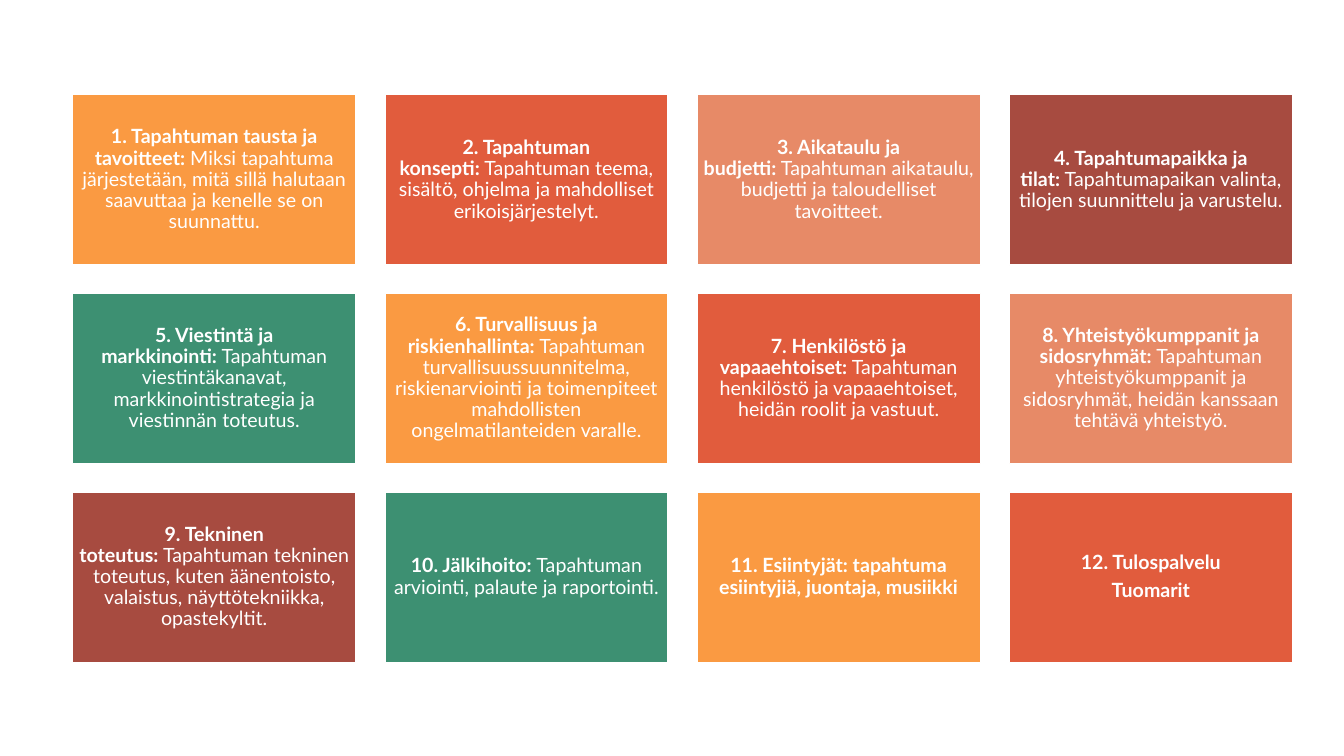
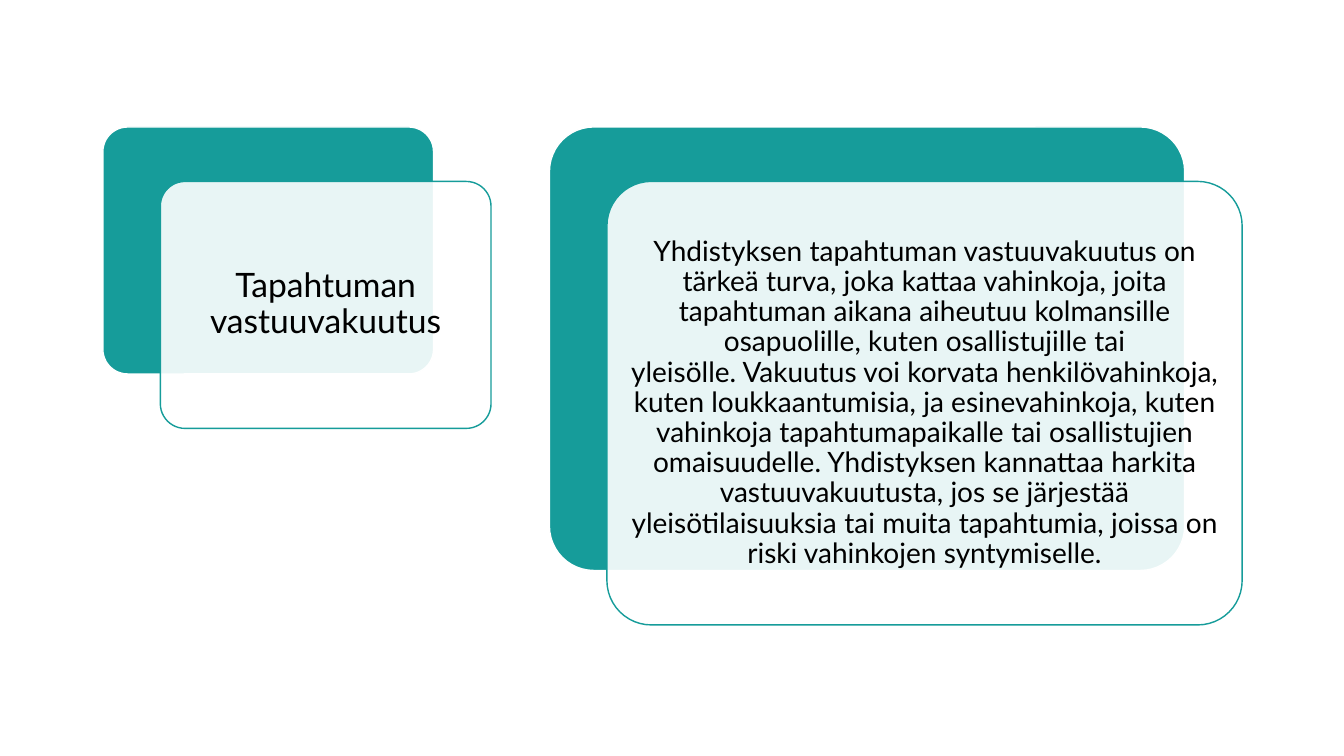
from dataclasses import dataclass
from lxml.etree import SubElement
from pptx import Presentation
from pptx.dml.color import RGBColor
from pptx.enum.shapes import MSO_SHAPE
from pptx.enum.text import MSO_ANCHOR, PP_ALIGN
from pptx.oxml.ns import qn
from pptx.util import Inches, Pt


@dataclass(frozen=True)
class Theme:
    font: str = "Lato"
    white: str = "FFFFFF"
    black: str = "000000"
    teal: str = "169C9A"
    topics: tuple = ("FA9A42", "E15C3D", "E78A67", "A74B40", "3D9072")
    topic_size: int = 14
    heading_size: int = 24
    body_size: int = 20
    line_width: int = 1
    line_spacing: float = 0.9
    space_after: int = 5
    card_corner: float = 0.1
    card_opacity: int = 90


theme = Theme()
NBSP = chr(160)


def add_panel(slide, kind, left, top, width, height, fill, line):
    panel = slide.shapes.add_shape(
        kind, Inches(left), Inches(top), Inches(width), Inches(height))
    panel.shadow.inherit = False
    panel.fill.solid()
    panel.fill.fore_color.rgb = RGBColor.from_string(fill)
    panel.line.color.rgb = RGBColor.from_string(line)
    panel.line.width = Pt(theme.line_width)
    return panel


def write_text(panel, paragraphs, size, color, inset):
    frame = panel.text_frame
    frame.word_wrap = True
    frame.vertical_anchor = MSO_ANCHOR.MIDDLE
    frame.margin_left = frame.margin_right = Inches(inset)
    frame.margin_top = frame.margin_bottom = Inches(inset)
    for index, runs in enumerate(paragraphs):
        paragraph = frame.add_paragraph() if index else frame.paragraphs[0]
        paragraph.alignment = PP_ALIGN.CENTER
        paragraph.line_spacing = theme.line_spacing
        paragraph.space_after = Pt(theme.space_after)
        for text, bold in runs:
            run = paragraph.add_run()
            run.text = text
            run.font.name = theme.font
            run.font.size = Pt(size)
            run.font.bold = bold
            run.font.color.rgb = RGBColor.from_string(color)


presentation = Presentation()
presentation.slide_width = Inches(13.33)
presentation.slide_height = Inches(7.5)
blank = presentation.slide_layouts[6]

explained_topics = [
    ("1. Tapahtuman tausta ja tavoitteet:",
     "Miksi tapahtuma järjestetään, mitä sillä halutaan saavuttaa ja kenelle se on suunnattu."),
    ("2. Tapahtuman konsepti:",
     "Tapahtuman teema, sisältö, ohjelma ja mahdolliset erikoisjärjestelyt."),
    ("3. Aikataulu ja budjetti:",
     "Tapahtuman aikataulu, budjetti ja taloudelliset tavoitteet."),
    ("4. Tapahtumapaikka ja tilat:",
     "Tapahtumapaikan valinta, tilojen suunnittelu ja varustelu."),
    ("5. Viestintä ja markkinointi:",
     "Tapahtuman viestintäkanavat, markkinointistrategia ja viestinnän toteutus."),
    ("6. Turvallisuus ja riskienhallinta:",
     "Tapahtuman turvallisuussuunnitelma, riskienarviointi ja toimenpiteet "
     "mahdollisten ongelmatilanteiden varalle."),
    ("7. Henkilöstö ja vapaaehtoiset:",
     "Tapahtuman henkilöstö ja vapaaehtoiset, heidän roolit ja vastuut."),
    ("8. Yhteistyökumppanit ja sidosryhmät:",
     "Tapahtuman yhteistyökumppanit ja sidosryhmät, heidän kanssaan tehtävä yhteistyö."),
    ("9. Tekninen toteutus:",
     "Tapahtuman tekninen toteutus, kuten äänentoisto, valaistus, näyttötekniikka, opastekyltit."),
    ("10. Jälkihoito:",
     "Tapahtuman arviointi, palaute ja raportointi."),
]
topics = [[[(title, True), (NBSP + detail, False)]]
          for title, detail in explained_topics]
topics.append([[("11. Esiintyjät: tapahtuma esiintyjiä, juontaja, musiikki", True)]])
topics.append([[("12. Tulospalvelu", True)], [("Tuomarit", True)]])

columns = 4
grid_left, grid_right, grid_top = 0.72, 12.82, 0.94
tile_width, tile_height, row_gap = 2.81, 1.69, 0.28
column_gap = (grid_right - grid_left - columns * tile_width) / (columns - 1)

plan = presentation.slides.add_slide(blank)
for index, topic in enumerate(topics):
    row, column = divmod(index, columns)
    tile = add_panel(
        plan, MSO_SHAPE.RECTANGLE,
        grid_left + column * (tile_width + column_gap),
        grid_top + row * (tile_height + row_gap),
        tile_width, tile_height,
        theme.topics[index % len(theme.topics)], theme.white)
    write_text(tile, topic, theme.topic_size, theme.white, 0.06)

insurance_text = NBSP.join([
    "Yhdistyksen tapahtuman vastuuvakuutus on tärkeä turva, joka kattaa vahinkoja, "
    "joita tapahtuman aikana aiheutuu kolmansille osapuolille, kuten osallistujille "
    "tai yleisölle.",
    "Vakuutus voi korvata henkilövahinkoja, kuten loukkaantumisia, ja esinevahinkoja, "
    "kuten vahinkoja tapahtumapaikalle tai osallistujien omaisuudelle.",
    "Yhdistyksen kannattaa harkita vastuuvakuutusta, jos se järjestää "
    "yleisötilaisuuksia tai muita tapahtumia, joissa on riski vahinkojen syntymiselle.",
])
cards = [
    (1.02, 3.28, 2.45, "Tapahtuman vastuuvakuutus", theme.heading_size, 0.1),
    (5.45, 6.3, 4.4, insurance_text, theme.body_size, 0.08),
]
card_top = 1.26
offset_x, offset_y = 0.57, 0.54

insurance = presentation.slides.add_slide(blank)
for left, width, height, text, size, inset in cards:
    backing = add_panel(insurance, MSO_SHAPE.ROUNDED_RECTANGLE,
                        left, card_top, width, height, theme.teal, theme.white)
    card = add_panel(insurance, MSO_SHAPE.ROUNDED_RECTANGLE,
                     left + offset_x, card_top + offset_y, width, height,
                     theme.white, theme.teal)
    for layer in (backing, card):
        layer.adjustments[0] = theme.card_corner
    card_color = card.fill._xPr.find(qn("a:solidFill"))[0]
    SubElement(card_color, qn("a:alpha"), val=str(theme.card_opacity * 1000))
    write_text(card, [[(text, False)]], size, theme.black, inset)

presentation.save("out.pptx")
